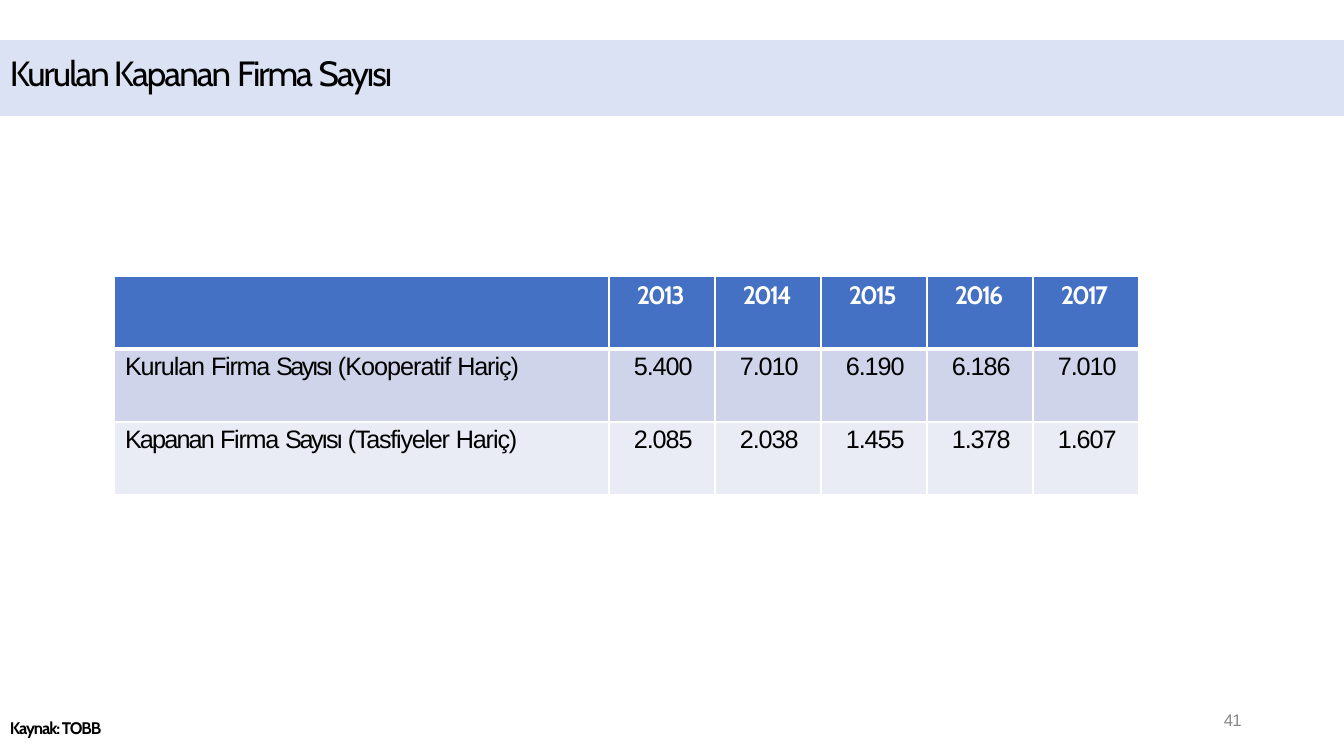
from dataclasses import dataclass

from lxml.etree import SubElement
from pptx import Presentation
from pptx.dml.color import RGBColor
from pptx.enum.shapes import MSO_SHAPE
from pptx.oxml.ns import qn
from pptx.util import Pt


@dataclass(frozen=True)
class Theme:
    band: str = "DAE2F3"
    header: str = "4471C4"
    opened_row: str = "CFD4EA"
    closed_row: str = "E9EBF5"
    ink: str = "000000"
    white: str = "FFFFFF"
    grey: str = "888888"
    heading_font: str = "Cabin"
    body_font: str = "Arial"
    title_size: int = 25
    table_size: int = 18
    footer_size: int = 12


THEME = Theme()
EMU_PER_PX = 914400 / 100.8

TITLE = dict(name=THEME.heading_font, size=Pt(THEME.title_size), color=THEME.ink)
HEADER = dict(name=THEME.heading_font, size=Pt(THEME.table_size), bold=True, color=THEME.white)
BODY = dict(name=THEME.body_font, size=Pt(THEME.table_size), bold=False, color=THEME.ink)
SOURCE = dict(name=THEME.heading_font, size=Pt(THEME.footer_size), bold=True, color=THEME.ink)
PAGE = dict(name=THEME.body_font, size=Pt(THEME.footer_size), color=THEME.grey)

YEARS = ["2013", "2014", "2015", "2016", "2017"]
OPENED = ["5.400", "7.010", "6.190", "6.186", "7.010"]
CLOSED = ["2.085", "2.038", "1.455", "1.378", "1.607"]
OPENED_LABEL = [("Kurulan ", -0.8), ("Firma ", -0.9), ("Sayısı ", -1.8),
                ("(Kooperatif ", -0.7), ("Hariç)", -0.8)]
CLOSED_LABEL = [("Kapanan ", -1.3), ("Firma ", -0.9), ("Sayısı ", -1.7),
                ("(Tasfiyeler ", -0.9), ("Hariç)", -0.8)]


def px(length):
    return round(length * EMU_PER_PX)


def set_margins(holder, left=0, top=0):
    margins = dict(margin_left=left, margin_top=top, margin_right=0, margin_bottom=0)
    for side, length in margins.items():
        setattr(holder, side, px(length))


def write(paragraph, pieces, style):
    for words, spacing in pieces:
        run = paragraph.add_run()
        run.text = words
        for attribute, value in style.items():
            if attribute == "color":
                run.font.color.rgb = RGBColor.from_string(value)
            else:
                setattr(run.font, attribute, value)
        run._r.get_or_add_rPr().set("spc", str(round(spacing * 100)))


def add_band(slide, left, top, width, height):
    band = slide.shapes.add_shape(MSO_SHAPE.RECTANGLE, *map(px, (left, top, width, height)))
    band.shadow.inherit = False
    band.fill.solid()
    band.fill.fore_color.rgb = RGBColor.from_string(THEME.band)
    band.line.fill.background()


def add_text(slide, box, pieces, style, line_spacing=None):
    frame = slide.shapes.add_textbox(*map(px, box)).text_frame
    frame.word_wrap = True
    set_margins(frame, left=1)
    paragraph = frame.paragraphs[0]
    paragraph.line_spacing = line_spacing
    write(paragraph, pieces, style)


def set_borders(cell, top, bottom):
    properties = cell._tc.get_or_add_tcPr()
    for side, width in dict(L=1, R=1, T=top, B=bottom).items():
        line = SubElement(properties, qn(f"a:ln{side}"), w=str(Pt(width)))
        fill = SubElement(line, qn("a:solidFill"))
        SubElement(fill, qn("a:srgbClr"), val=THEME.white)


def fill_row(cells, label, values, style, color, spacing, indent, top=1, bottom=1):
    contents = [label] + [[(value, spacing)] for value in values]
    for column, (cell, pieces) in enumerate(zip(cells, contents)):
        set_borders(cell, top, bottom)
        cell.fill.solid()
        cell.fill.fore_color.rgb = RGBColor.from_string(color)
        set_margins(cell, left=indent if column else 11, top=4)
        write(cell.text_frame.paragraphs[0], pieces, style)


def add_firm_table(slide):
    widths = [495] + [106] * len(YEARS)
    heights = [73] * 3
    firms = slide.shapes.add_table(len(heights), len(widths), px(114), px(276),
                                   px(sum(widths)), px(sum(heights))).table
    firms.first_row = firms.horz_banding = False
    for column, width in zip(firms.columns, widths):
        column.width = px(width)
    for row, height in zip(firms.rows, heights):
        row.height = px(height)
    years, opened, closed = (row.cells for row in firms.rows)
    fill_row(years, [], YEARS, HEADER, THEME.header, -1.5, 28, bottom=3)
    fill_row(opened, OPENED_LABEL, OPENED, BODY, THEME.opened_row, -0.8, 25, top=3)
    fill_row(closed, CLOSED_LABEL, CLOSED, BODY, THEME.closed_row, -0.8, 25)


def main():
    deck = Presentation()
    deck.slide_width, deck.slide_height = px(1344), px(756)
    slide = deck.slides.add_slide(deck.slide_layouts[6])
    add_band(slide, 0, 40, 1344, 76)
    add_text(slide, (9, 52, 404, 44),
             [("Kurulan Kapanan ", -1.4), ("Firma ", -1.5), ("Sayısı", -1.4)], TITLE)
    add_firm_table(slide)
    add_text(slide, (1223, 713, 22, 19), [("41", -0.6)], PAGE, Pt(12.4))
    add_text(slide, (9, 721, 100, 19), [("Kaynak: TOBB", -0.8)], SOURCE, Pt(12.4))
    deck.save("out.pptx")


if __name__ == "__main__":
    main()
